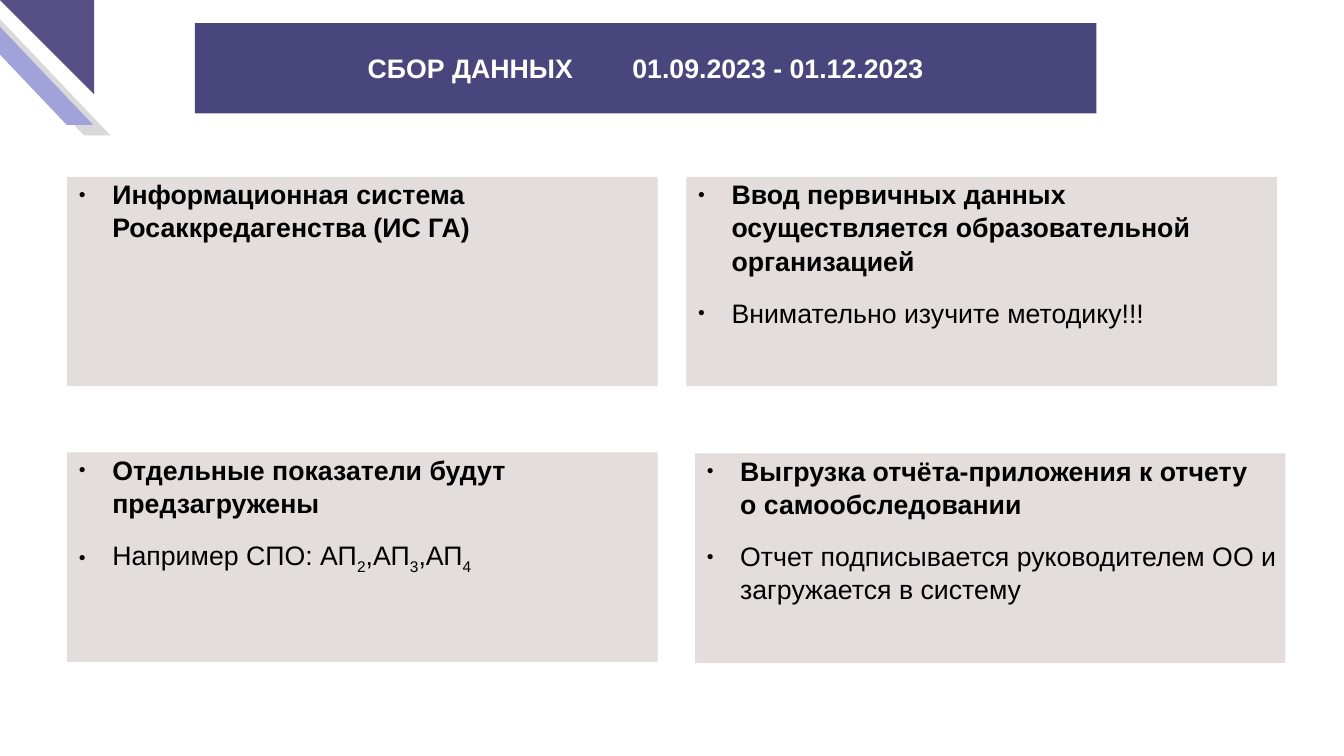
from lxml import etree
from pptx import Presentation
from pptx.dml.color import RGBColor
from pptx.enum.shapes import MSO_SHAPE
from pptx.enum.text import MSO_ANCHOR, MSO_AUTO_SIZE, PP_ALIGN
from pptx.oxml.ns import qn
from pptx.util import Inches, Pt

PARALLELOGRAM, TRIANGLE = MSO_SHAPE.PARALLELOGRAM, MSO_SHAPE.RIGHT_TRIANGLE
TOP, MIDDLE, CENTER = MSO_ANCHOR.TOP, MSO_ANCHOR.MIDDLE, PP_ALIGN.CENTER
NO_AUTOFIT = MSO_AUTO_SIZE.NONE

# Content: each card has a bold lead and an optional plain remark.
# Paragraphs are lists of pieces; digit pieces become subscripts.
TITLE = ("СБОР ДАННЫХ", "01.09.2023 - 01.12.2023")
CARDS = [
    ((0.7, 1.84), [["Информационная система Росаккредагенства (ИС ГА)"]]),
    ((7.15, 1.84), [
        ["Ввод первичных данных осуществляется образовательной организацией"],
        ["Внимательно изучите методику!!!"]]),
    ((0.7, 4.71), [
        ["Отдельные показатели будут предзагружены"],
        ["Например СПО: АП", "2", ",АП", "3", ",АП", "4"]]),
    ((7.24, 4.72), [
        ["Выгрузка отчёта-приложения к отчету", "\n", "о самообследовании"],
        ["Отчет подписывается руководителем ОО и загружается в систему"]]),
]
CARD_SIZE = (6.15, 2.18)
TITLE_BOX = (2.03, 0.24, 9.39, 0.94)

THEME = {
    "font": "Arial", "size": 20, "line": 1.04, "gap": 14.1,
    "title_fill": "49467D", "title_text": "FFFFFF",
    "card_fill": "E4DDDD", "card_text": "000000",
    "grey": "D9D9D9", "lilac": "A2A2DA", "violet": "565087",
}
# Corner ornament: preset, box, colour, skew, flips
CORNER = [
    (PARALLELOGRAM, (-0.36, 0.11, 1.51, 1.3), "grey", 0.95, ["flipH"]),
    (PARALLELOGRAM, (-0.54, 0, 1.51, 1.3), "lilac", 0.95, ["flipH"]),
    (TRIANGLE, (0, 0, 0.98, 0.98), "violet", None, ["flipH", "flipV"]),
]


def colour(name):
    return RGBColor.from_string(THEME[name])


def fill(shape, name):
    shape.fill.solid()
    shape.fill.fore_color.rgb = colour(name)


def prepare(holder, box, fill_name, anchor):
    holder.left, holder.top, holder.width, holder.height = map(Inches, box)
    fill(holder, fill_name)
    frame = holder.text_frame
    frame.margin_left = frame.margin_top = 0
    frame.margin_right = frame.margin_bottom = 0
    frame.word_wrap = True
    frame.auto_size = NO_AUTOFIT
    frame.vertical_anchor = anchor
    return frame


def set_font(paragraph, colour_name, bold):
    font = paragraph.font
    font.name, font.size, font.bold = THEME["font"], Pt(THEME["size"]), bold
    font.color.rgb = colour(colour_name)


def add_bullet(paragraph):
    props = paragraph._p.get_or_add_pPr()
    props.set("marL", str(Inches(0.47)))
    props.set("indent", str(Inches(-0.35)))
    bullet_colour = etree.SubElement(props, qn("a:buClr"))
    etree.SubElement(bullet_colour, qn("a:srgbClr"), val=THEME["card_text"])
    etree.SubElement(props, qn("a:buSzPct"), val="45000")
    etree.SubElement(props, qn("a:buFont"), typeface=THEME["font"])
    etree.SubElement(props, qn("a:buChar"), char="●")


def add_pieces(paragraph, pieces):
    for piece in pieces:
        if piece == "\n":
            paragraph.add_line_break()
            continue
        run = paragraph.add_run()
        run.text = piece
        if piece.isdigit():
            run._r.get_or_add_rPr().set("baseline", "-25000")


prs = Presentation()
prs.slide_width, prs.slide_height = Inches(14), Inches(7.87)
slide = prs.slides.add_slide(prs.slide_layouts[4])  # title and four bodies
title, *bodies = slide.placeholders

# Corner ornament
for preset, box, fill_name, skew, flips in CORNER:
    ornament = slide.shapes.add_shape(preset, *map(Inches, box))
    ornament.shadow.inherit = False
    ornament.line.fill.background()
    fill(ornament, fill_name)
    if skew:
        ornament.adjustments[0] = skew
    for flip in flips:
        ornament._element.spPr.xfrm.set(flip, "1")

# Title band: one widely tracked space separates topic and dates
heading = prepare(title, TITLE_BOX, "title_fill", MIDDLE).paragraphs[0]
heading.alignment = CENTER
add_pieces(heading, [TITLE[0], " ", TITLE[1]])
heading.runs[1]._r.get_or_add_rPr().set("spc", "3900")
set_font(heading, "title_text", True)

# Cards
for body, (corner, paragraphs) in zip(bodies, CARDS):
    frame = prepare(body, corner + CARD_SIZE, "card_fill", TOP)
    for i, pieces in enumerate(paragraphs):
        paragraph = frame.add_paragraph() if i else frame.paragraphs[0]
        add_bullet(paragraph)
        paragraph.line_spacing = THEME["line"]
        paragraph.space_before = Pt(THEME["gap"] if i else 0)
        add_pieces(paragraph, pieces)
        set_font(paragraph, "card_text", i == 0)

prs.save("out.pptx")
